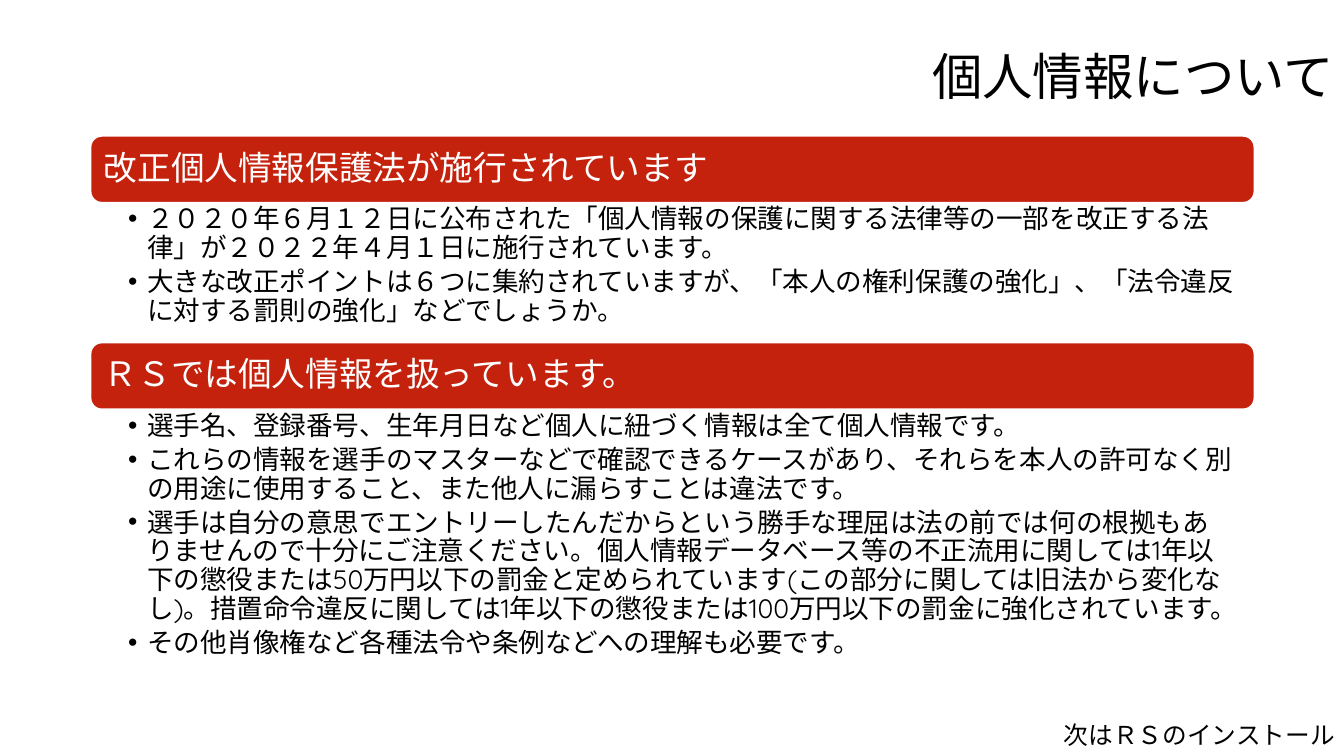
from lxml.etree import SubElement
from pptx import Presentation
from pptx.dml.color import RGBColor
from pptx.enum.lang import MSO_LANGUAGE_ID
from pptx.enum.shapes import MSO_SHAPE
from pptx.enum.text import MSO_ANCHOR, MSO_AUTO_SIZE, PP_ALIGN
from pptx.oxml.ns import qn
from pptx.util import Inches, Pt

# Content
TITLE = "個人情報について"
NEXT_TOPIC = "次はＲＳのインストール"
# (heading, list height in inches, list items)
SECTIONS = [
    ("改正個人情報保護法が施行されています", 1.39, [
        "２０２０年６月１２日に公布された「個人情報の保護に関する法律等の一部を改正する法律」が２０２２年４月１日に施行されています。",
        "大きな改正ポイントは６つに集約されていますが、「本人の権利保護の強化」、「法令違反に対する罰則の強化」などでしょうか。",
    ]),
    ("ＲＳでは個人情報を扱っています。", 2.77, [
        "選手名、登録番号、生年月日など個人に紐づく情報は全て個人情報です。",
        "これらの情報を選手のマスターなどで確認できるケースがあり、それらを本人の許可なく別の用途に使用すること、また他人に漏らすことは違法です。",
        "選手は自分の意思でエントリーしたんだからという勝手な理屈は法の前では何の根拠もありませんので十分にご注意ください。個人情報データベース等の不正流用に関しては1年以下の懲役または50万円以下の罰金と定められています(この部分に関しては旧法から変化なし)。措置命令違反に関しては1年以下の懲役または100万円以下の罰金に強化されています。",
        "その他肖像権など各種法令や条例などへの理解も必要です。",
    ]),
]

# Style
FONT = "Quicksand"
RED = RGBColor(0xC4, 0x22, 0x0D)
WHITE = RGBColor(0xFF, 0xFF, 0xFF)
BLACK = RGBColor(0x00, 0x00, 0x00)
LEFT, TOP, WIDTH, BAR_HEIGHT = 0.9, 1.35, 11.54, 0.66
LIST_SIZE = 19
BULLET_INDENT = Inches(0.19)


def place(shape, left, top, width, height):
    shape.left, shape.top = Inches(left), Inches(top)
    shape.width, shape.height = Inches(width), Inches(height)


def set_margins(text_frame, left, right, vertical):
    text_frame.margin_left, text_frame.margin_right = Inches(left), Inches(right)
    text_frame.margin_top = text_frame.margin_bottom = Inches(vertical)


def format_text(text_frame, size, color, align, anchor, space_after=0):
    text_frame.word_wrap = True
    text_frame.auto_size = MSO_AUTO_SIZE.NONE
    text_frame.vertical_anchor = anchor
    for paragraph in text_frame.paragraphs:
        paragraph.alignment = align
        paragraph.line_spacing = 0.9
        paragraph.space_before = Pt(0)
        paragraph.space_after = Pt(space_after)
        for run in paragraph.runs:
            run.font.name = FONT
            run.font.size = Pt(size)
            run.font.color.rgb = color
            run.font.language_id = MSO_LANGUAGE_ID.JAPANESE


def add_bullet(paragraph):
    properties = paragraph._p.get_or_add_pPr()
    properties.set("marL", str(BULLET_INDENT))
    properties.set("indent", str(-BULLET_INDENT))
    SubElement(properties, qn("a:buChar")).set("char", "•")


presentation = Presentation()
presentation.slide_width, presentation.slide_height = Inches(13.33), Inches(7.5)
# The "Two Content" layout has a title and two list placeholders
slide = presentation.slides.add_slide(presentation.slide_layouts[3])

# Title
title, *list_placeholders = slide.placeholders
place(title, 1.77, 0.49, 11.56, 0.6)
title.text_frame.text = TITLE
format_text(title.text_frame, 36, BLACK, PP_ALIGN.RIGHT, MSO_ANCHOR.MIDDLE)

# Sections: a red heading bar with its list directly below
top = TOP
for (heading, list_height, items), body in zip(SECTIONS, list_placeholders):
    bar = slide.shapes.add_shape(
        MSO_SHAPE.ROUNDED_RECTANGLE,
        Inches(LEFT), Inches(top), Inches(WIDTH), Inches(BAR_HEIGHT))
    bar.shadow.inherit = False
    bar.fill.solid()
    bar.fill.fore_color.rgb = RED
    bar.line.color.rgb = WHITE
    bar.line.width = Pt(1)
    bar.text_frame.text = heading
    set_margins(bar.text_frame, 0.1, 0.1, 0.1)
    format_text(bar.text_frame, 24, WHITE, PP_ALIGN.LEFT, MSO_ANCHOR.MIDDLE)

    place(body, LEFT, top + BAR_HEIGHT, WIDTH, list_height)
    body.text_frame.text = "\n".join(items)
    set_margins(body.text_frame, 0.37, 0.19, 0.03)
    for paragraph in body.text_frame.paragraphs:
        add_bullet(paragraph)
    format_text(body.text_frame, LIST_SIZE, BLACK, PP_ALIGN.LEFT,
                MSO_ANCHOR.TOP, space_after=LIST_SIZE * 0.2)
    top += BAR_HEIGHT + list_height

# Pointer to the next topic
next_box = slide.shapes.add_textbox(
    Inches(7.66), Inches(7.12), Inches(5.68), Inches(0.38))
next_box.text_frame.text = NEXT_TOPIC
format_text(next_box.text_frame, 17.6, BLACK, PP_ALIGN.RIGHT, MSO_ANCHOR.MIDDLE)

presentation.save("out.pptx")
